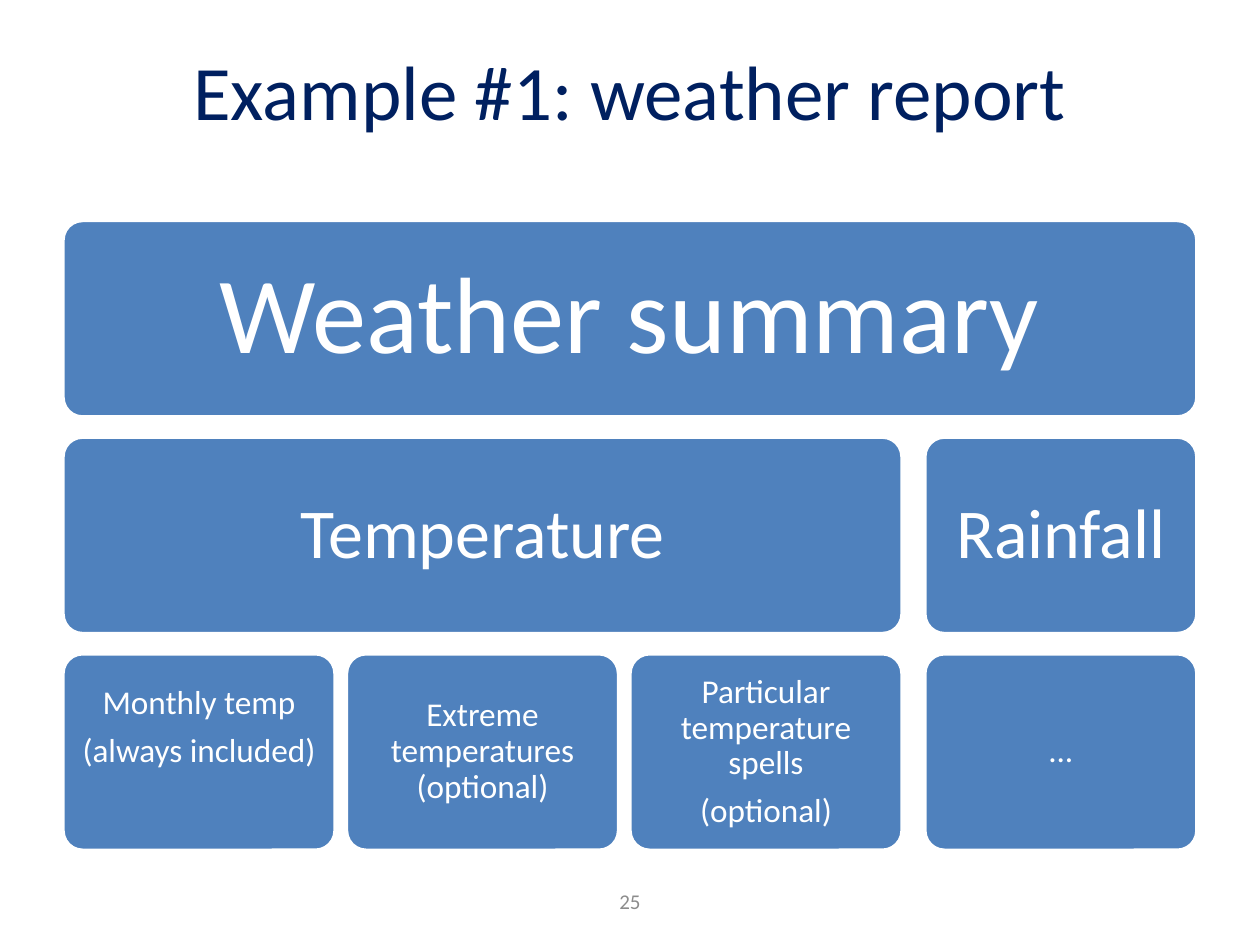
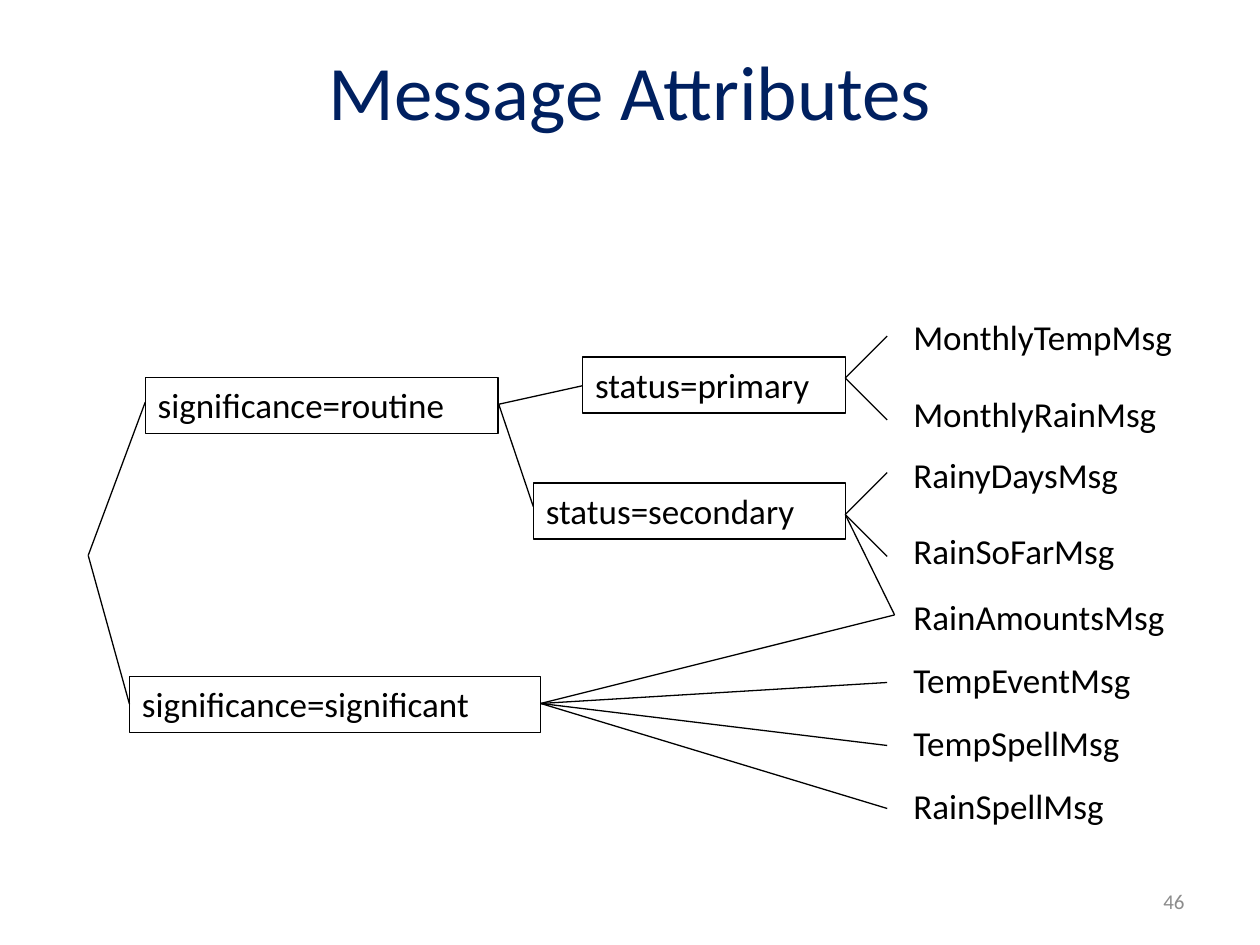
import pptx
import pptx.util
import pptx.dml.color
import pptx.enum.shapes
import pptx.enum.text
import pptx.oxml.ns
import lxml.etree

Pt = pptx.util.Pt
RGB = pptx.dml.color.RGBColor.from_string
ALIGN = pptx.enum.text.PP_ALIGN
ANCHOR = pptx.enum.text.MSO_ANCHOR
SHAPES = pptx.enum.shapes.MSO_SHAPE

theme = {
    "font": "Calibri",
    "navy": RGB("002060"),
    "blue": RGB("4F81BD"),
    "white": RGB("FFFFFF"),
    "black": RGB("000000"),
    "grey": RGB("8C8C8C"),
    "title": Pt(44),
    "number": Pt(12),
    "label": Pt(20),
    "tiers": [Pt(62), Pt(40), Pt(19)],
    "thin": Pt(0.75),
    "tile_edge": Pt(2),
}


def write(shape, lines, size, color, align, frame_format={}, paragraph_format={}):
    frame = shape.text_frame
    frame_values = {
        "word_wrap": True,
        "auto_size": pptx.enum.text.MSO_AUTO_SIZE.NONE,
        "vertical_anchor": ANCHOR.MIDDLE,
        **frame_format,
    }
    for name, value in frame_values.items():
        setattr(frame, name, value)
    frame.text = "\n".join(lines)
    for paragraph in frame.paragraphs:
        for name, value in {"alignment": align, **paragraph_format}.items():
            setattr(paragraph, name, value)
        font = paragraph.runs[0].font
        for name, value in {"name": theme["font"], "size": size}.items():
            setattr(font, name, value)
        font.color.rgb = color


def add_box(slide, preset, left, top, width, height, fill, edge, edge_width):
    box = slide.shapes.add_shape(preset, Pt(left), Pt(top), Pt(width), Pt(height))
    box.shadow.inherit = False
    if fill is None:
        box.fill.background()
    else:
        box.fill.solid()
        box.fill.fore_color.rgb = fill
    box.line.color.rgb = edge
    box.line.width = edge_width
    return box


deck = pptx.Presentation()
deck.slide_width, deck.slide_height = Pt(720), Pt(540)

title_place = {"left": Pt(36), "top": Pt(6), "width": Pt(648), "height": Pt(90)}
pages = [
    ("Example #1: weather report", "25", 246, 228, ALIGN.CENTER),
    ("Message Attributes", "46", 516, 168, ALIGN.RIGHT),
]
for heading, number, left, width, align in pages:
    slide = deck.slides.add_slide(deck.slide_layouts[5])
    for name, value in title_place.items():
        setattr(slide.shapes.title, name, value)
    write(slide.shapes.title, [heading], theme["title"], theme["navy"], ALIGN.CENTER)
    page_number = slide.shapes.add_textbox(Pt(left), Pt(500.4), Pt(width), Pt(28.8))
    write(page_number, [number], theme["number"], theme["grey"], align)

report, attributes = deck.slides

tile_width, tile_height = 155.5, 112.3
tile_top, tier_pitch = 126, 123.8
column_lefts = [36, 198, 360, 528.5]
tier_insets = [18.6, 12, 5.7]
blank_line = 27.6
tiles = [
    (0, 0, 3, ["Weather summary"], 0),
    (1, 0, 2, ["Temperature"], 0),
    (1, 3, 3, ["Rainfall"], 0),
    (2, 0, 0, ["Monthly temp", "(always included)"], blank_line),
    (2, 1, 1, ["Extreme temperatures (optional)"], 0),
    (2, 2, 2, ["Particular temperature spells", "(optional)"], 0),
    (2, 3, 3, ["..."], 0),
]
for tier, first, last, lines, lift in tiles:
    left = column_lefts[first]
    width = column_lefts[last] + tile_width - left
    tile = add_box(report, SHAPES.ROUNDED_RECTANGLE, left, tile_top + tier * tier_pitch,
                   width, tile_height, theme["blue"], theme["white"], theme["tile_edge"])
    tile.adjustments[0] = 0.1
    size, inset = theme["tiers"][tier], tier_insets[tier]
    insets = {f"margin_{side}": Pt(inset) for side in ("left", "top", "right")}
    insets["margin_bottom"] = Pt(inset + lift)
    spacing = {"line_spacing": 0.9, "space_after": Pt(round(size.pt * 0.35, 1))}
    write(tile, lines, size, theme["white"], ALIGN.CENTER, insets, spacing)

top_anchor = {"vertical_anchor": ANCHOR.TOP}
conditions = [
    ("significance=routine", 83, 215.8, 201.6),
    ("status=primary", 333, 204, 150),
    ("status=secondary", 304.8, 276, 178.2),
    ("significance=significant", 74, 386.6, 235),
]
for condition, left, top, width in conditions:
    box = add_box(attributes, SHAPES.RECTANGLE, left, top, width, 32,
                  None, theme["black"], theme["thin"])
    write(box, [condition], theme["label"], theme["black"], ALIGN.LEFT, top_anchor)

messages = [
    ("MonthlyTempMsg", 177),
    ("MonthlyRainMsg", 221),
    ("RainyDaysMsg", 255.6),
    ("RainSoFarMsg", 299),
    ("RainAmountsMsg", 336.6),
    ("TempEventMsg", 372.6),
    ("TempSpellMsg", 408.6),
    ("RainSpellMsg", 444.6),
]
for message, top in messages:
    label = attributes.shapes.add_textbox(Pt(514.8), Pt(top), Pt(198), Pt(31))
    write(label, [message], theme["label"], theme["black"], ALIGN.LEFT, top_anchor)

rain_amounts = (511.2, 351.4)
branches = {
    (50.4, 317.4): [(83, 229.8), (74, 402.4)],
    (285, 231): [(333, 220.4), (304.8, 289.6)],
    (483, 216): [(507, 192), (507, 240)],
    (483, 294): [(507, 270), (507, 318), rain_amounts],
    (309, 402): [rain_amounts, (507, 390), (507, 426), (507, 462)],
}
for start, ends in branches.items():
    for end in ends:
        branch = attributes.shapes.add_connector(
            pptx.enum.shapes.MSO_CONNECTOR.STRAIGHT, *map(Pt, start + end))
        branch.line.color.rgb = theme["black"]
        branch.line.width = theme["thin"]
        lxml.etree.SubElement(branch._element.spPr, pptx.oxml.ns.qn("a:effectLst"))

deck.save("out.pptx")
